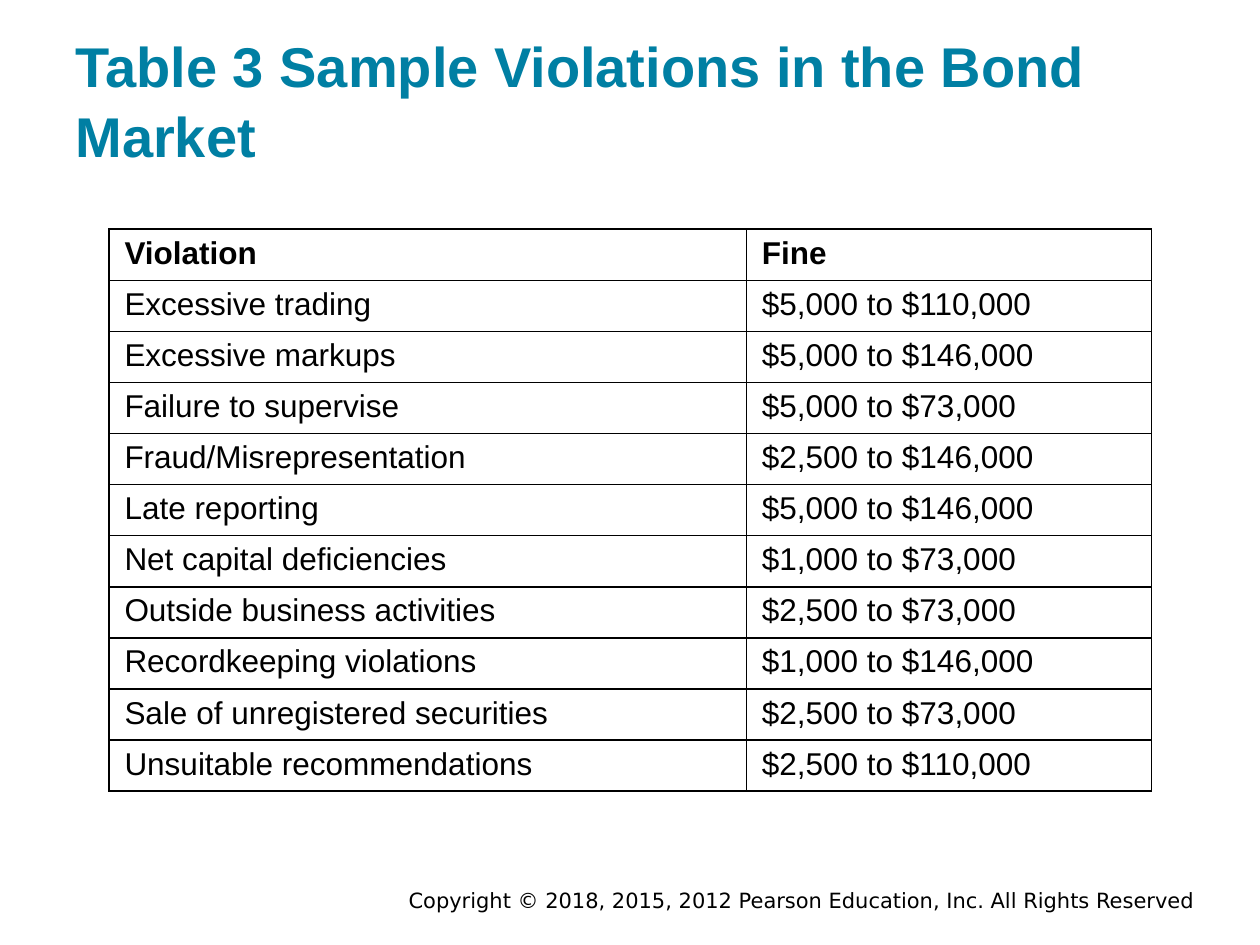
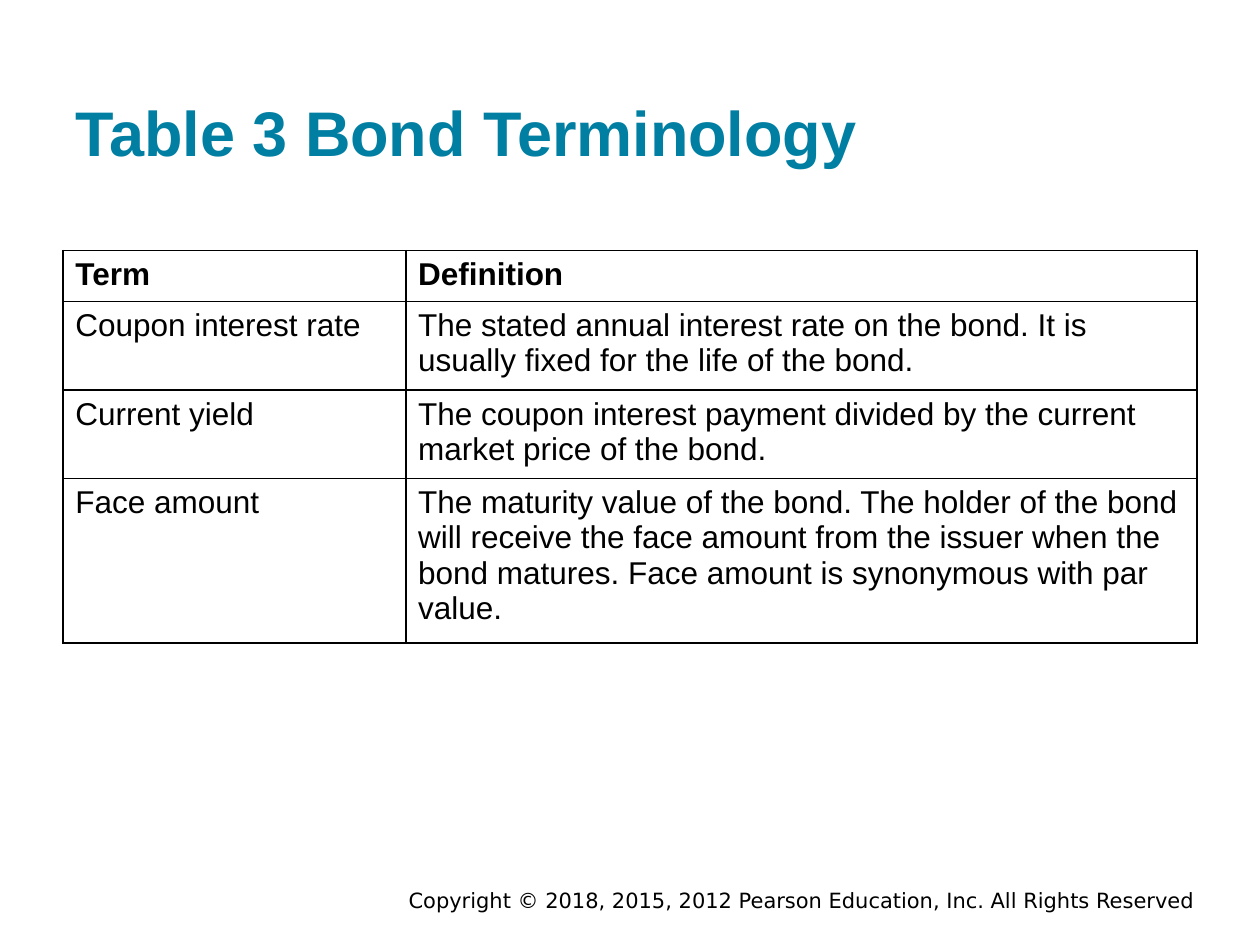
"""Build two bond market table slides with a shared title style and copyright footer."""
from dataclasses import dataclass

from lxml.etree import SubElement
from pptx import Presentation
from pptx.dml.color import RGBColor
from pptx.enum.text import MSO_ANCHOR as Anchor, MSO_AUTO_SIZE as AutoSize, PP_ALIGN as Align
from pptx.oxml.ns import qn
from pptx.util import Cm, Pt


@dataclass(frozen=True)
class Theme:
    teal: str = "007FA3"
    black: str = "000000"
    white: str = "FFFFFF"
    font: str = "Arial"
    footer_font: str = "DejaVu Sans"
    cell_size: int = 18
    footer_size: int = 12
    border: int = 1


THEME = Theme()
COPYRIGHT = "Copyright © 2018, 2015, 2012 Pearson Education, Inc. All Rights Reserved"
TITLE_AREA = (1.27, 0.61, 22.86, 3.05)
FOOTER_AREA = (4.45, 17.86, 19.89, 0.56)
ROW_HEIGHT = 1.03

TABLES = [
    {
        "title": "Table 3 Sample Violations in the Bond Market",
        "title_size": 32,
        "corner": (2.2, 4.62),
        "columns": (12.85, 8.16),
        "side_margin": 0.31,
        "row_heights": [ROW_HEIGHT] * 11,
        "rows": [
            ("Violation", "Fine"),
            ("Excessive trading", "$5,000 to $110,000"),
            ("Excessive markups", "$5,000 to $146,000"),
            ("Failure to supervise", "$5,000 to $73,000"),
            ("Fraud/Misrepresentation", "$2,500 to $146,000"),
            ("Late reporting", "$5,000 to $146,000"),
            ("Net capital deficiencies", "$1,000 to $73,000"),
            ("Outside business activities", "$2,500 to $73,000"),
            ("Recordkeeping violations", "$1,000 to $146,000"),
            ("Sale of unregistered securities", "$2,500 to $73,000"),
            ("Unsuitable recommendations", "$2,500 to $110,000"),
        ],
    },
    {
        "title": "Table 3 Bond Terminology",
        "title_size": 36,
        "corner": (1.27, 5.05),
        "columns": (6.91, 15.95),
        "side_margin": 0.25,
        "row_heights": [ROW_HEIGHT, 1.67, 1.67, 3.1],
        "rows": [
            ("Term", "Definition"),
            ("Coupon interest rate",
             "The stated annual interest rate on the bond. "
             "It is usually fixed for the life of the bond."),
            ("Current yield",
             "The coupon interest payment divided by the current market price of the bond."),
            ("Face amount",
             "The maturity value of the bond. The holder of the bond will receive the face "
             "amount from the issuer when the bond matures. Face amount is synonymous with "
             "par value."),
        ],
    },
]


def style_text(frame, font, size, color, bold=False, align=Align.LEFT):
    for para in frame.paragraphs:
        para.alignment = align
        for span in para.runs:
            span.font.name = font
            span.font.size = Pt(size)
            span.font.bold = bold
            span.font.color.rgb = RGBColor.from_string(color)


def set_margins(target, side, vertical):
    target.margin_left = target.margin_right = Cm(side)
    target.margin_top = target.margin_bottom = Cm(vertical)


def add_title(page, text, size):
    title = page.shapes.title
    title.left, title.top, title.width, title.height = map(Cm, TITLE_AREA)
    frame = title.text_frame
    frame.text = text
    frame.auto_size = AutoSize.NONE
    frame.vertical_anchor = Anchor.BOTTOM
    set_margins(frame, 0.25, 0.25)
    frame.paragraphs[0].line_spacing = 1.05
    style_text(frame, THEME.font, size, THEME.teal, bold=True)


def add_footer(page):
    frame = page.shapes.add_textbox(*map(Cm, FOOTER_AREA)).text_frame
    frame.text = COPYRIGHT
    frame.word_wrap = True
    frame.vertical_anchor = Anchor.MIDDLE
    set_margins(frame, 0.25, 0.13)
    style_text(frame, THEME.footer_font, THEME.footer_size, THEME.black, align=Align.RIGHT)


def add_borders(cell):
    properties = cell._tc.get_or_add_tcPr()
    for index, side in enumerate(("lnL", "lnR", "lnT", "lnB")):
        line = properties.makeelement(qn(f"a:{side}"), {"w": str(Pt(THEME.border))})
        properties.insert(index, line)
        fill = SubElement(line, qn("a:solidFill"))
        SubElement(fill, qn("a:srgbClr"), val=THEME.black)


def add_grid(page, content):
    rows, columns, heights = content["rows"], content["columns"], content["row_heights"]
    size = (sum(columns), sum(heights))
    table = page.shapes.add_table(
        len(rows), len(columns), *map(Cm, content["corner"] + size)).table
    table.horz_banding = False
    for column, width in zip(table.columns, columns):
        column.width = Cm(width)
    for row_index, (row, height, texts) in enumerate(zip(table.rows, heights, rows)):
        row.height = Cm(height)
        for cell, text in zip(row.cells, texts):
            cell.text_frame.text = text
            set_margins(cell, content["side_margin"], 0.13)
            cell.fill.solid()
            cell.fill.fore_color.rgb = RGBColor.from_string(THEME.white)
            style_text(cell.text_frame, THEME.font, THEME.cell_size, THEME.black,
                       bold=row_index == 0)
            add_borders(cell)


def main():
    deck = Presentation()
    deck.slide_width, deck.slide_height = Cm(25.4), Cm(19.05)
    title_only = deck.slide_layouts.get_by_name("Title Only")
    for content in TABLES:
        page = deck.slides.add_slide(title_only)
        add_footer(page)
        add_title(page, content["title"], content["title_size"])
        add_grid(page, content)
    deck.save("out.pptx")


if __name__ == "__main__":
    main()
